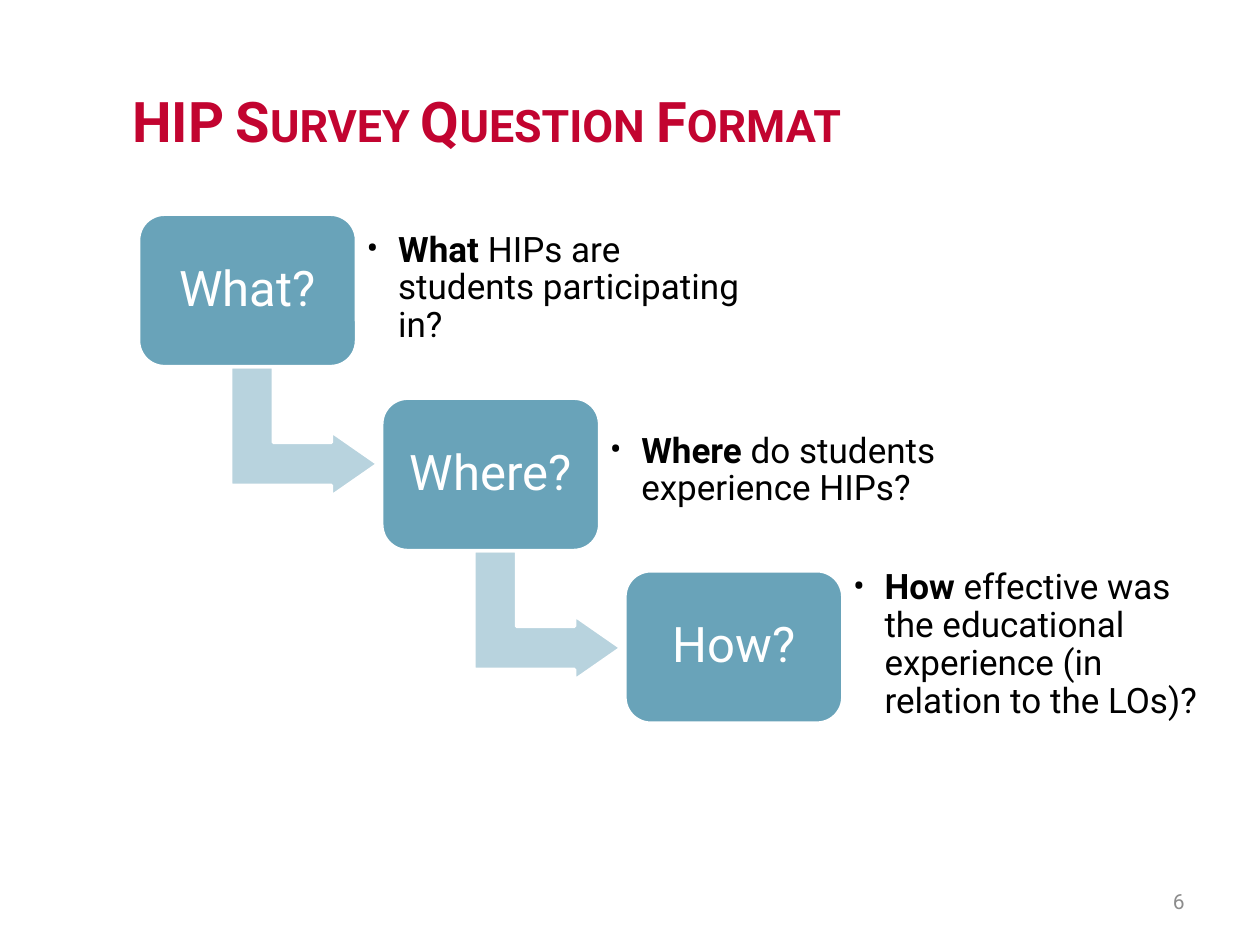
"""Build the HIP survey question format slide."""
from lxml import etree
from pptx import Presentation
from pptx.dml.color import RGBColor
from pptx.enum.shapes import MSO_SHAPE
from pptx.enum.text import MSO_ANCHOR, PP_ALIGN
from pptx.oxml.ns import qn
from pptx.util import Inches, Pt

ROUNDED, BENT_ARROW = MSO_SHAPE.ROUNDED_RECTANGLE, MSO_SHAPE.BENT_UP_ARROW
MIDDLE = MSO_ANCHOR.MIDDLE
LEFT, CENTER, RIGHT = PP_ALIGN.LEFT, PP_ALIGN.CENTER, PP_ALIGN.RIGHT
TITLE_ONLY = 5
BOX_WIDTH, BOX_HEIGHT = 1.73, 1.21
ARROW_WIDTH, ARROW_HEIGHT = 1.03, 1.17


def write(shape, spans, size, color, align, inset=0.1):
    """Fill one paragraph with (text, bold) runs and return it."""
    frame = shape.text_frame
    frame.word_wrap = True
    frame.vertical_anchor = MIDDLE
    frame.margin_left = frame.margin_right = Inches(inset)
    frame.margin_top = frame.margin_bottom = Inches(inset)
    para = frame.paragraphs[0]
    para.alignment = align
    for text, bold in spans:
        span = para.add_run()
        span.text = text
        span.font.name = "Roboto"
        span.font.size = Pt(size)
        span.font.bold = bold
        span.font.color.rgb = RGBColor.from_string(color)
    return para


def add_block(page, kind, place, color, adjustments):
    """Add a filled shape with a white outline."""
    shape = page.shapes.add_shape(kind, *map(Inches, place))
    shape.shadow.inherit = False
    shape.fill.solid()
    shape.fill.fore_color.rgb = RGBColor.from_string(color)
    shape.line.color.rgb = RGBColor.from_string("FFFFFF")
    shape.line.width = Pt(2)
    for index, value in enumerate(adjustments):
        shape.adjustments[index] = value
    return shape


deck = Presentation()
deck.slide_width, deck.slide_height = Inches(10), Inches(7.5)
page = deck.slides.add_slide(deck.slide_layouts[TITLE_ONLY])

title = page.shapes.title
title.left, title.top = Inches(0.95), Inches(0.33)
title.width, title.height = Inches(7.75), Inches(1.25)
heading = write(title, [("HIP Survey Question Format", True)], 32, "C20430", LEFT)
heading.runs[0].font._element.set("cap", "small")

number = page.shapes.add_textbox(Inches(7.17), Inches(6.95), Inches(2.33), Inches(0.4))
write(number, [("6", False)], 12, "8C8C8C", RIGHT)

steps = [
    ("What?", 1.7, (1.67, 3.32, 1.24),
     [("What ", True), ("HIPs are students participating in?", False)]),
    ("Where?", 3.16, (3.03, 3.11, 1.41),
     [("Where", True), (" do students experience HIPs?", False)]),
    ("How?", 4.53, (4.51, 2.99, 1.22),
     [("How ", True),
      ("effective was the educational experience (in relation to the LOs)?", False)]),
]
for index, (label, top, (note_top, note_width, note_height), question) in enumerate(steps):
    left = 1.1 + 1.93 * index
    if index < len(steps) - 1:
        place = (left + 0.8, top + 1.14, ARROW_WIDTH, ARROW_HEIGHT)
        arrow = add_block(page, BENT_ARROW, place, "B8D3DE", (0.33, 0.25, 0.36))
        arrow.rotation = 90

    box = add_block(page, ROUNDED, (left, top, BOX_WIDTH, BOX_HEIGHT), "69A3B9", (0.17,))
    write(box, [(label, False)], 28, "FFFFFF", CENTER, 0.08).line_spacing = 0.9

    note = page.shapes.add_textbox(Inches(left + BOX_WIDTH), Inches(note_top),
                                   Inches(note_width), Inches(note_height))
    para = write(note, question, 20, "000000", LEFT, 0.08)
    para.line_spacing = 0.9
    properties = para._p.get_or_add_pPr()
    properties.set("marL", str(Inches(0.25)))
    properties.set("indent", str(Inches(-0.25)))
    etree.SubElement(properties, qn("a:buFont"), typeface="Roboto")
    etree.SubElement(properties, qn("a:buChar"), char="•")

deck.save("out.pptx")
